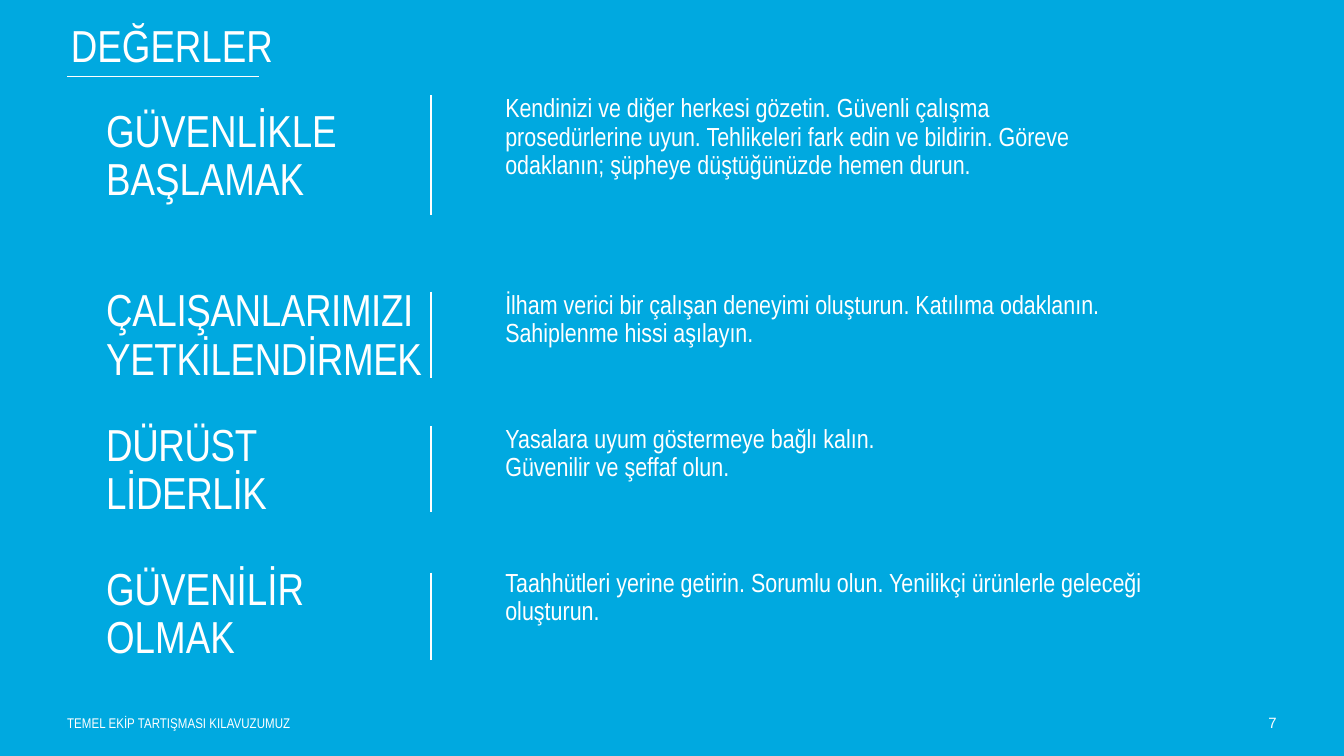
from pptx import Presentation
from pptx.dml.color import RGBColor
from pptx.enum.lang import MSO_LANGUAGE_ID
from pptx.enum.shapes import MSO_CONNECTOR
from pptx.enum.text import MSO_ANCHOR, PP_ALIGN
from pptx.oxml.ns import qn
from pptx.util import Inches, Pt
from lxml.etree import SubElement

BLUE = RGBColor(0x00, 0xA9, 0xE0)
WHITE = RGBColor(0xFF, 0xFF, 0xFF)

deck = Presentation()
deck.slide_width = Inches(10)
deck.slide_height = deck.slide_width * 9 // 16
page = deck.slides.add_slide(deck.slide_layouts[6])
page.background.fill.solid()
page.background.fill.fore_color.rgb = BLUE


def add_text(text, left, top, width, height, size, font="Arial Narrow", caps=False,
             tracking=0, wrap=True, inset_top=0, anchor=MSO_ANCHOR.TOP, **para_format):
    """Add a white one-paragraph box; caps follow Turkish rules (i becomes İ)."""
    box = page.shapes.add_textbox(*map(Inches, (left, top, width, height)))
    frame = box.text_frame
    frame_format = {"word_wrap": wrap, "vertical_anchor": anchor, "margin_left": 0,
                    "margin_right": 0, "margin_top": Inches(inset_top), "margin_bottom": 0}
    for name, value in frame_format.items():
        setattr(frame, name, value)
    para = frame.paragraphs[0]
    para.text = text
    for name, value in para_format.items():
        setattr(para, name, value)
    font_format = {"name": font, "size": Pt(size), "language_id": MSO_LANGUAGE_ID.TURKISH}
    for span in para.runs:
        for name, value in font_format.items():
            setattr(span.font, name, value)
        span.font.color.rgb = WHITE
        if caps:
            span._r.get_or_add_rPr().set("cap", "all")
        if tracking:
            span._r.get_or_add_rPr().set("spc", str(tracking))


def add_rule(*ends):
    rule = page.shapes.add_connector(MSO_CONNECTOR.STRAIGHT, *map(Inches, ends))
    rule.line.color.rgb = WHITE
    rule.line.width = Pt(1)
    SubElement(rule._element.spPr, qn("a:effectLst"))


# Title
add_text("Değerler", 0, 0, 2.56, 0.71, 24, caps=True, anchor=MSO_ANCHOR.MIDDLE,
         alignment=PP_ALIGN.CENTER, line_spacing=0.9)
add_rule(0.5, 0.57, 1.93, 0.57)

# Values: name, name width, name height, tracking, top, rule top, rule bottom,
# description, description width, description height
values = [
    ("Güvenlikle Başlamak", 2.16, 0.92, 0, 0.71, 0.71, 1.6,
     "Kendinizi ve diğer herkesi gözetin. Güvenli çalışma prosedürlerine uyun. "
     "Tehlikeleri fark edin ve bildirin. Göreve odaklanın; şüpheye düştüğünüzde "
     "hemen durun.", 4.67, 1.12),
    ("Çalışanlarımızı Yetkilendirmek", 2.56, 0.67, -20, 2.17, 2.17, 2.81,
     "İlham verici bir çalışan deneyimi oluşturun. Katılıma odaklanın. "
     "Sahiplenme hissi aşılayın.", 4.64, 0.79),
    ("Dürüst Liderlik", 2.16, 0.67, -20, 3.17, 3.17, 3.81,
     "Yasalara uyum göstermeye bağlı kalın. \vGüvenilir ve şeffaf olun.", 4.59, 0.67),
    ("Güvenilir Olmak", 2.16, 0.67, 0, 4.24, 4.26, 4.91,
     "Taahhütleri yerine getirin. Sorumlu olun. Yenilikçi ürünlerle geleceği "
     "oluşturun.", 5.45, 0.67),
]
for (value, value_width, value_height, tracking, top, rule_top, rule_bottom,
     description, description_width, description_height) in values:
    add_text(value, 0.79, top, value_width, value_height, 24, caps=True,
             tracking=tracking, anchor=MSO_ANCHOR.MIDDLE, line_spacing=0.9)
    add_rule(3.21, rule_top, 3.21, rule_bottom)
    add_text(description, 3.76, top, description_width, description_height, 14,
             line_spacing=0.9)

# Footer
add_text("Temel Ekip Tartışması Kılavuzumuz", 0.5, 5.3, 4.35, 0.2, 7.5, caps=True,
         wrap=False, inset_top=0.02)
add_text("7", 9, 5.3, 0.5, 0.2, 8, font="Arial", wrap=False, inset_top=0.01,
         alignment=PP_ALIGN.RIGHT)

deck.save("out.pptx")
